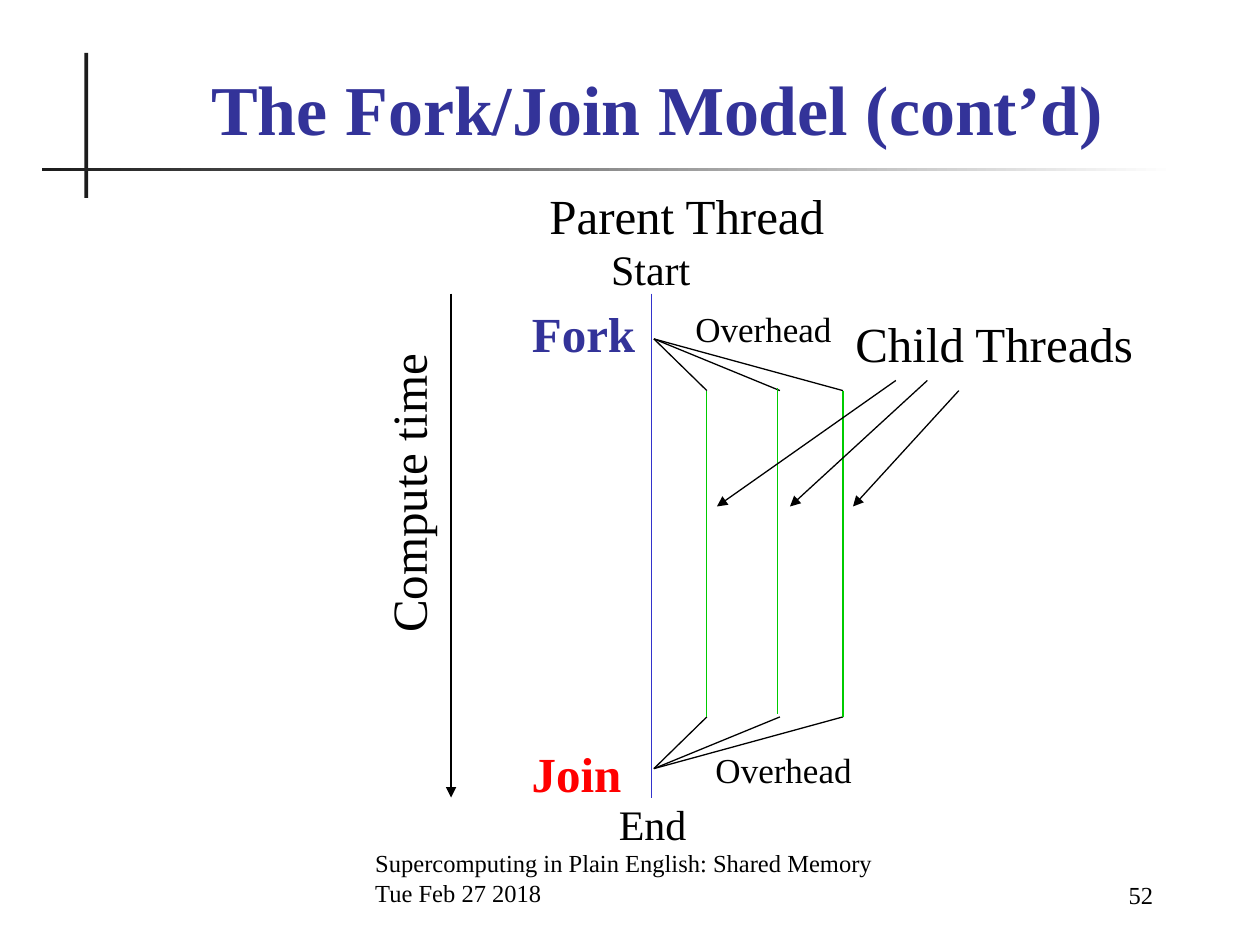
from lxml import etree
from pptx import Presentation
from pptx.dml.color import RGBColor
from pptx.enum.shapes import MSO_CONNECTOR, MSO_SHAPE
from pptx.enum.text import MSO_ANCHOR, MSO_AUTO_SIZE, PP_ALIGN
from pptx.oxml.ns import qn
from pptx.util import Inches, Pt

STRAIGHT = MSO_CONNECTOR.STRAIGHT
RECTANGLE = MSO_SHAPE.RECTANGLE
TOP, BOTTOM = MSO_ANCHOR.TOP, MSO_ANCHOR.BOTTOM
LEFT, CENTER, RIGHT = PP_ALIGN.LEFT, PP_ALIGN.CENTER, PP_ALIGN.RIGHT
NO_FIT = MSO_AUTO_SIZE.NONE
BLACK = RGBColor(0x00, 0x00, 0x00)
WHITE = RGBColor(0xFF, 0xFF, 0xFF)
CHARCOAL = RGBColor(0x1C, 0x1C, 0x1C)
NAVY = RGBColor(0x33, 0x33, 0x99)
BLUE = RGBColor(0x33, 0x33, 0xCC)
GREEN = RGBColor(0x00, 0xCC, 0x00)
RED = RGBColor(0xFF, 0x00, 0x00)


class SlideBuilder:
    font_name = "Times New Roman"
    line_width = Pt(0.75)

    def __init__(self, page):
        self.page = page

    def place(self, box, left, top, width, height):
        box.left, box.top = Inches(left), Inches(top)
        box.width, box.height = Inches(width), Inches(height)

    def set_text(self, box, lines, size, color, bold, align, anchor, wrap):
        frame = box.text_frame
        frame.auto_size = NO_FIT
        frame.word_wrap = wrap
        frame.vertical_anchor = anchor
        frame.text = lines
        for para in frame.paragraphs:
            para.alignment = align
            para.font.name = self.font_name
            para.font.size = Pt(size)
            para.font.bold = bold
            para.font.color.rgb = color

    def title(self, text, *bounds):
        box = self.page.shapes.title
        self.place(box, *bounds)
        self.set_text(box, text, 40, NAVY, True, CENTER, BOTTOM, True)

    def label(self, text, bounds, size=28, color=BLACK, bold=False,
              align=LEFT, anchor=TOP, wrap=False, rotation=0):
        box = self.page.shapes.add_textbox(*map(Inches, bounds))
        box.rotation = rotation
        self.set_text(box, text, size, color, bold, align, anchor, wrap)

    def bar(self, *bounds, fade_to=None):
        box = self.page.shapes.add_shape(RECTANGLE, *map(Inches, bounds))
        box.shadow.inherit = False
        box.line.fill.background()
        if fade_to is None:
            box.fill.solid()
            box.fill.fore_color.rgb = CHARCOAL
        else:
            box.fill.gradient()
            box.fill.gradient_angle = 0
            for stop, color in zip(box.fill.gradient_stops, (CHARCOAL, fade_to)):
                stop.color.rgb = color

    def line(self, start, end, color=BLACK, arrow=False):
        connector = self.page.shapes.add_connector(
            STRAIGHT, *map(Inches, (*start, *end)))
        connector.line.width = self.line_width
        connector.line.color.rgb = color
        properties = connector._element.spPr
        if arrow:
            tail = etree.SubElement(properties.find(qn("a:ln")), qn("a:tailEnd"))
            tail.set("type", "triangle")
        etree.SubElement(properties, qn("a:effectLst"))


def main():
    deck = Presentation()
    deck.slide_width, deck.slide_height = Inches(10), Inches(7.5)
    builder = SlideBuilder(deck.slides.add_slide(deck.slide_layouts[5]))

    builder.bar(0.67, 0.42, 0.03, 1.15)
    builder.bar(0.33, 1.33, 9, 0.03, fade_to=WHITE)
    builder.title("The Fork/Join Model (cont’d)", 0.83, 0.5, 8.77, 0.74)
    builder.label("Supercomputing in Plain English: Shared Memory\nTue Feb 27 2018",
                  (2.88, 6.75, 4.37, 0.5), size=14, anchor=BOTTOM, wrap=True)
    builder.label("52", (7.83, 6.77, 1.42, 0.5), size=14, align=RIGHT,
                  anchor=BOTTOM, wrap=True)

    start_y, end_y = 2.33, 6.33
    builder.line((5.17, start_y), (5.17, end_y), BLUE)
    builder.line((3.58, start_y), (3.58, end_y), arrow=True)

    fork, join = (5.19, 2.69), (5.19, 6.1)
    child_top, child_bottom = 3.1, 5.69
    for x in (5.61, 6.19, 6.69):
        builder.line(fork, (x, child_top))
        builder.line(join, (x, child_bottom))
    for x, offset in ((5.61, 0), (6.17, -0.02), (6.69, 0)):
        builder.line((x, child_top + offset), (x, child_bottom + offset), GREEN)

    for start, end_x in (((7.11, 3.02), 5.69), ((7.36, 3.02), 6.27),
                         ((7.61, 3.1), 6.77)):
        builder.line(start, (end_x, 4.02), arrow=True)

    builder.label("Parent Thread", (4.25, 1.42, 2.39, 0.57), align=RIGHT)
    builder.label("Start", (4.75, 1.88, 0.83, 0.5), size=24, align=CENTER)
    builder.label("End", (4.81, 6.29, 0.74, 0.5), size=24, align=CENTER)
    builder.label("Fork", (4.12, 2.36, 1.02, 0.57), color=NAVY, bold=True, align=RIGHT)
    builder.label("Join", (4.12, 5.85, 0.91, 0.57), color=RED, bold=True, align=RIGHT)
    builder.label("Child Threads", (6.69, 2.44, 2.41, 0.57))
    builder.label("Compute time", (2.03, 3.63, 2.41, 0.57), rotation=270)
    for left, top in ((5.42, 2.39), (5.58, 5.89)):
        builder.label("Overhead", (left, top, 1.28, 0.43), size=20)

    deck.save("out.pptx")


if __name__ == "__main__":
    main()
